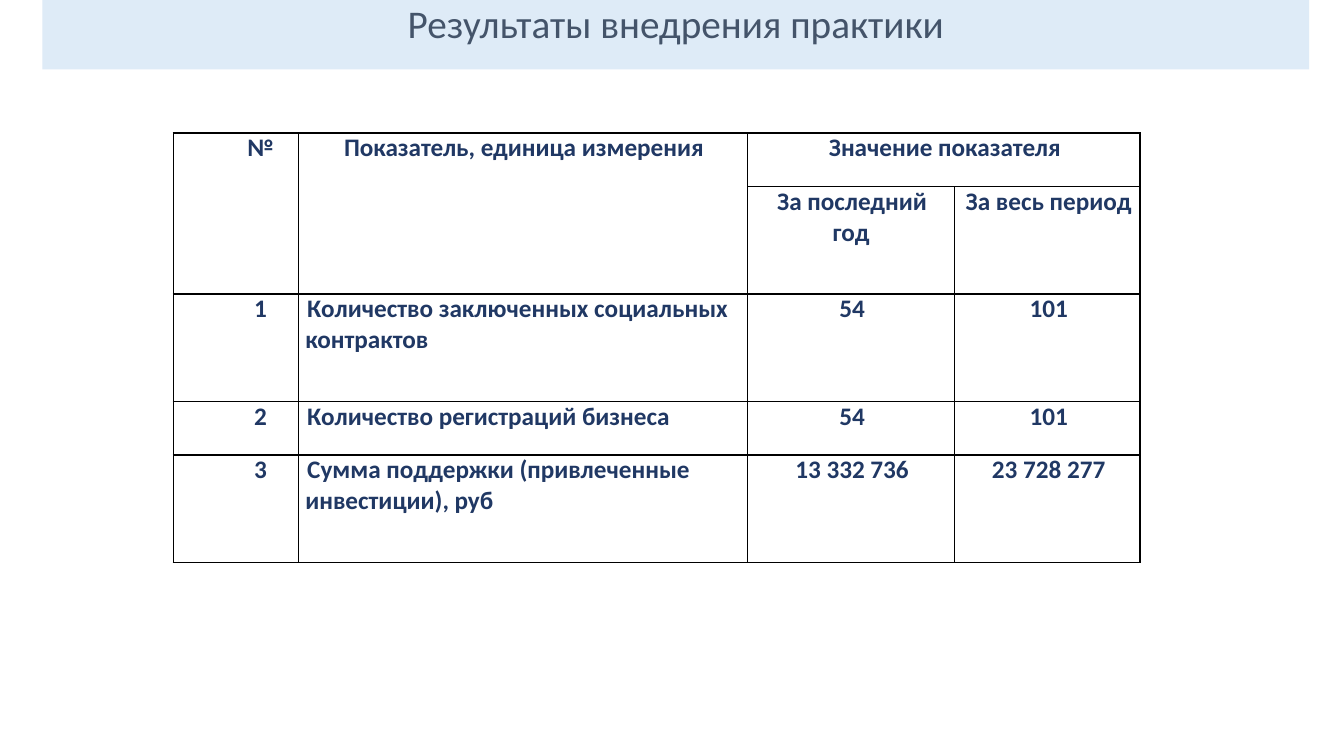
import pptx
import pptx.dml.color
import pptx.enum.text
import pptx.oxml
import pptx.oxml.ns
import pptx.util

Pt = pptx.util.Pt
RGBColor = pptx.dml.color.RGBColor
PP_ALIGN = pptx.enum.text.PP_ALIGN

# Content
TITLE = "Результаты внедрения практики"
ROWS = [
    ("№", "Показатель, единица измерения", "Значение показателя", ""),
    ("", "", "За последний год", "За весь период"),
    ("1", "Количество заключенных социальных контрактов", "54", "101"),
    ("2", "Количество регистраций бизнеса", "54", "101"),
    ("3", "Сумма поддержки (привлеченные инвестиции), руб", "13 332 736", "23 728 277"),
]
MERGES = [((0, 0), (1, 0)), ((0, 1), (1, 1)), ((0, 2), (0, 3))]
HEADER_ROWS = 2

# Layout, in points
COL_WIDTHS = [89.3, 321.1, 147.6, 132.5]
COL_INDENTS = [35.3, 1.4, 1.4, 2.2]
ROW_UNIT = 38.35
ROW_UNITS = [1, 2, 2, 1, 2]
TABLE_LEFT, TABLE_TOP = 123.8, 95
CELL_MARGIN = 5

BAND = RGBColor(0xDE, 0xEB, 0xF7)
SLATE = RGBColor(0x44, 0x54, 0x6A)
NAVY = RGBColor(0x20, 0x38, 0x64)
BORDER = RGBColor(0, 0, 0)


def write(tf, text, size, color, bold=False, align=PP_ALIGN.CENTER, indent=0, spacing=None):
    p = tf.paragraphs[0]
    p.alignment = align
    p.line_spacing = spacing
    if indent:
        pPr = p._p.get_or_add_pPr()
        pPr.set("marL", "0")
        pPr.set("indent", str(int(Pt(indent))))
    r = p.add_run()
    r.text = text
    r.font.name = "Calibri"
    r.font.size = Pt(size)
    r.font.bold = bold
    r.font.color.rgb = color


def add_borders(cell):
    tcPr = cell._tc.get_or_add_tcPr()
    for i, side in enumerate("LRTB"):
        tcPr.insert(i, pptx.oxml.parse_xml(
            f'<a:ln{side} {pptx.oxml.ns.nsdecls("a")} w="{int(Pt(1))}"><a:solidFill>'
            f'<a:srgbClr val="{BORDER}"/></a:solidFill></a:ln{side}>'))


prs = pptx.Presentation()
prs.slide_width, prs.slide_height = Pt(960), Pt(540)
s = prs.slides.add_slide(prs.slide_layouts[5])

# Title band
sp = s.shapes.title
sp.left, sp.top, sp.width, sp.height = Pt(30.2), Pt(0), Pt(905), Pt(49.5)
sp.fill.solid()
sp.fill.fore_color.rgb = BAND
tf = sp.text_frame
tf.auto_size = pptx.enum.text.MSO_AUTO_SIZE.NONE
tf.vertical_anchor = pptx.enum.text.MSO_ANCHOR.TOP
write(tf, TITLE, 28, SLATE, spacing=0.9)

# Results table
table = s.shapes.add_table(
    len(ROWS), len(COL_WIDTHS), Pt(TABLE_LEFT), Pt(TABLE_TOP),
    Pt(sum(COL_WIDTHS)), Pt(ROW_UNIT * sum(ROW_UNITS))).table
table.first_row = table.horz_banding = False
for column, width in zip(table.columns, COL_WIDTHS):
    column.width = Pt(width)
for row, units in zip(table.rows, ROW_UNITS):
    row.height = Pt(ROW_UNIT * units)
for first, last in MERGES:
    table.cell(*first).merge(table.cell(*last))

for i, values in enumerate(ROWS):
    for j, value in enumerate(values):
        cell = table.cell(i, j)
        cell.margin_left = cell.margin_right = Pt(CELL_MARGIN)
        cell.margin_top = cell.margin_bottom = 0
        cell.fill.background()
        add_borders(cell)
        if value:
            is_name = j == 1 and i >= HEADER_ROWS
            write(cell.text_frame, value, 18, NAVY, bold=True, indent=COL_INDENTS[j],
                  align=PP_ALIGN.LEFT if is_name else PP_ALIGN.CENTER)

prs.save("out.pptx")
